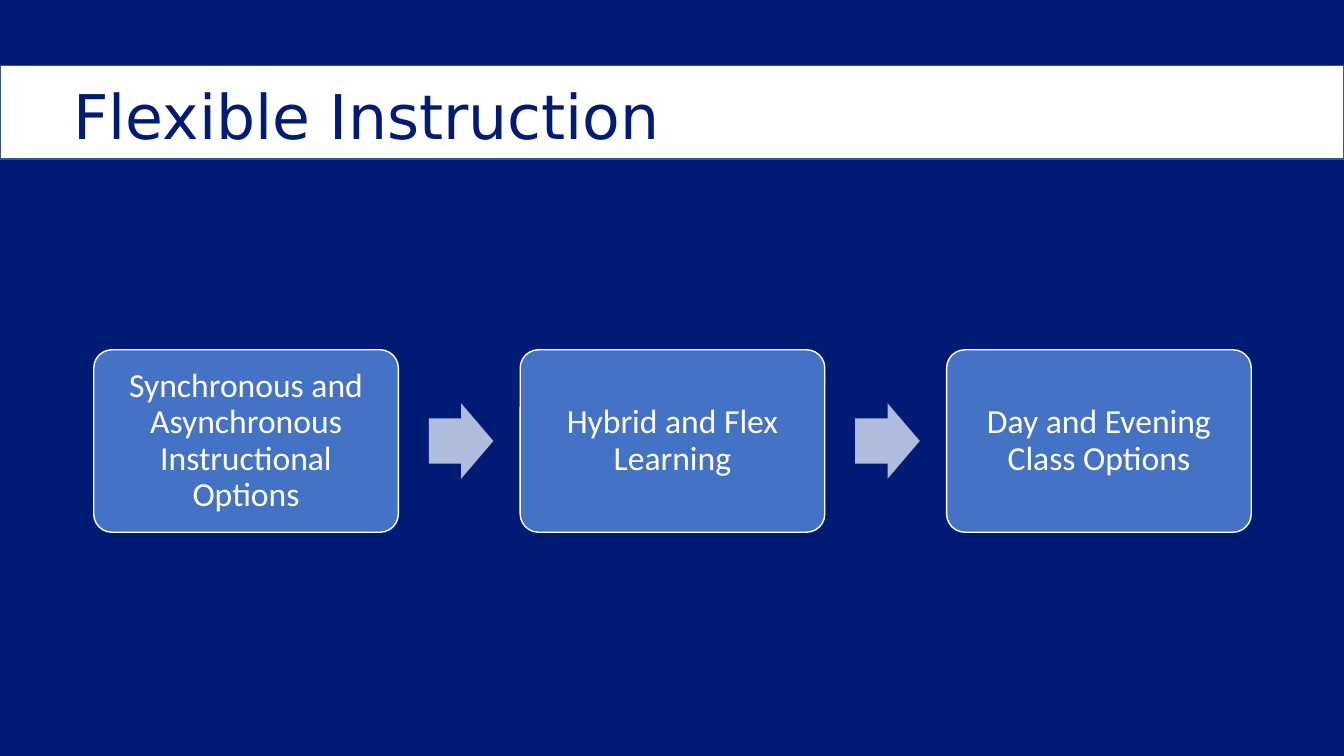
from pptx import Presentation
from pptx.dml.color import RGBColor
from pptx.enum.shapes import MSO_SHAPE
from pptx.enum.text import MSO_ANCHOR, PP_ALIGN
from pptx.util import Inches, Pt

WIDTH, HEIGHT = 13.33, 7.5
COLORS = {"navy": "001B74", "white": "FFFFFF", "band_line": "325491",
          "step": "4472C4", "arrow": "B0BCDE"}
STEPS = ["Synchronous and Asynchronous Instructional Options",
         "Hybrid and Flex Learning",
         "Day and Evening Class Options"]


def color(name):
    return RGBColor.from_string(COLORS[name])


def add_block(page, kind, box, fill, line=None):
    block = page.shapes.add_shape(kind, *[Inches(length) for length in box])
    block.shadow.inherit = False
    block.fill.solid()
    block.fill.fore_color.rgb = color(fill)
    if line:
        block.line.color.rgb = color(line)
        block.line.width = Pt(1)
    else:
        block.line.fill.background()
    return block


def write(frame, text, font, size, ink, align, anchor):
    frame.word_wrap = True
    frame.vertical_anchor = anchor
    para = frame.paragraphs[0]
    para.alignment = align
    para.line_spacing = 0.9
    span = para.add_run()
    span.text = text
    span.font.name = font
    span.font.size = Pt(size)
    span.font.color.rgb = color(ink)


def add_title_band(page, box, title):
    left, top, width, height = box
    add_block(page, MSO_SHAPE.RECTANGLE, box, "white", "band_line")
    # Title, indented from the left edge of the band
    indent = 0.63
    label = page.shapes.add_textbox(Inches(left + indent), Inches(top - 0.01),
                                    Inches(width - indent - 0.49), Inches(height))
    write(label.text_frame, title, "DejaVu Sans", 44, "navy",
          PP_ALIGN.LEFT, MSO_ANCHOR.BOTTOM)


def add_process(page, box, steps):
    left, top, width, height = box
    # Gaps are 0.4 of a step wide
    step_width = width / (len(steps) + 0.4 * (len(steps) - 1))
    pitch = 1.4 * step_width
    arrow_width, arrow_height = 0.64, 0.75
    for index, text in enumerate(steps):
        step_left = left + index * pitch
        # Arrow from the step before
        if index:
            arrow_left = step_left - 0.3 * step_width
            arrow_top = top + (height - arrow_height) / 2
            arrow = add_block(page, MSO_SHAPE.RIGHT_ARROW,
                              (arrow_left, arrow_top, arrow_width, arrow_height), "arrow")
            arrow.adjustments[0] = 0.6
            arrow.adjustments[1] = 0.5
        # Step
        step = add_block(page, MSO_SHAPE.ROUNDED_RECTANGLE,
                         (step_left, top, step_width, height), "step", "white")
        step.adjustments[0] = 0.1
        frame = step.text_frame
        frame.margin_left = frame.margin_right = Inches(0.1)
        frame.margin_top = frame.margin_bottom = Inches(0.1)
        write(frame, text, "Calibri", 24, "white", PP_ALIGN.CENTER, MSO_ANCHOR.MIDDLE)


def main():
    deck = Presentation()
    deck.slide_width, deck.slide_height = Inches(WIDTH), Inches(HEIGHT)
    page = deck.slides.add_slide(deck.slide_layouts[6])
    page.background.fill.solid()
    page.background.fill.fore_color.rgb = color("navy")
    add_title_band(page, (0, 0.65, WIDTH, 0.93), "Flexible Instruction")
    add_process(page, (0.93, 3.47, 11.48, 1.81), STEPS)
    deck.save("out.pptx")


if __name__ == "__main__":
    main()
